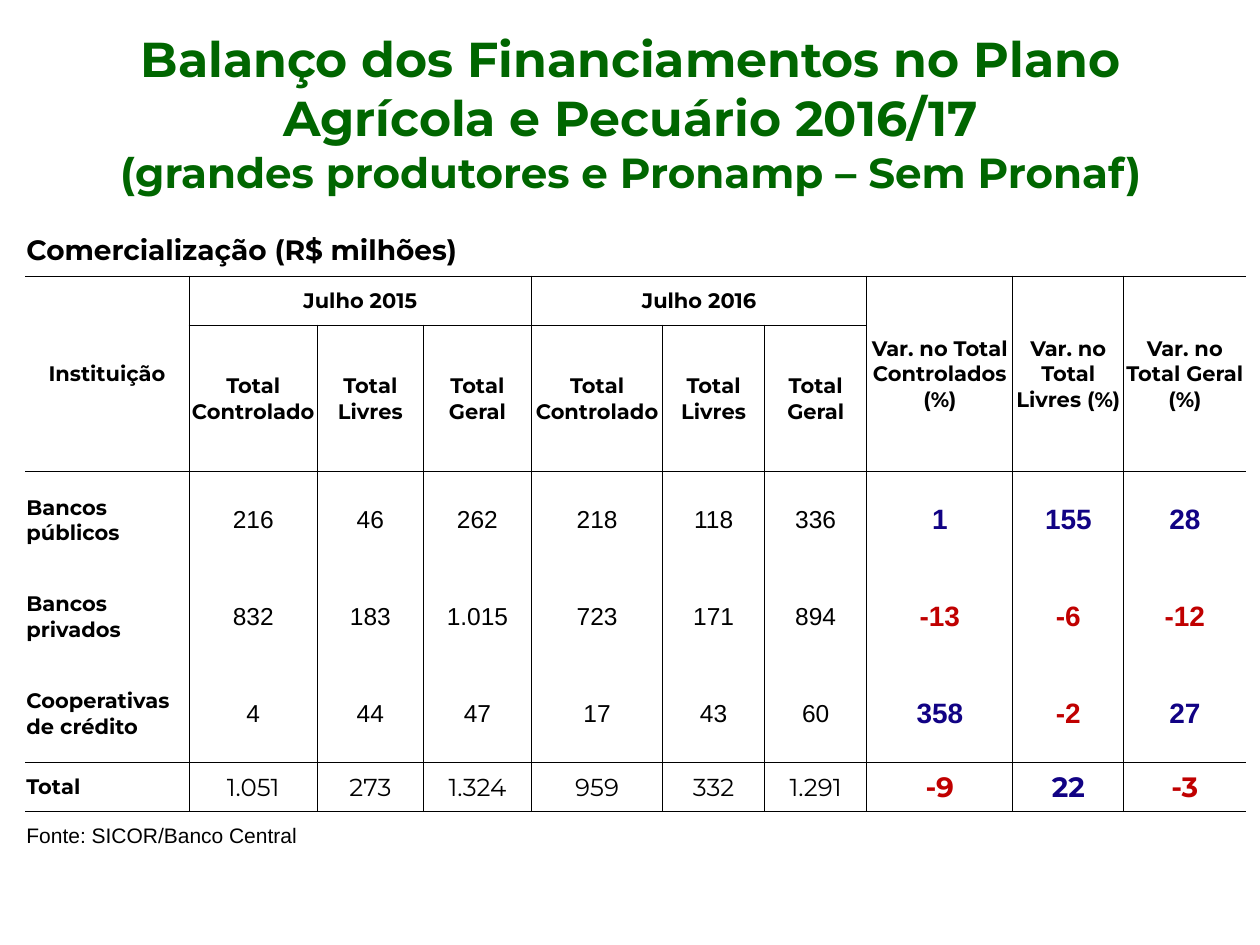
from lxml.etree import SubElement
from pptx import Presentation
from pptx.dml.color import RGBColor
from pptx.enum.text import MSO_ANCHOR as Anchor, PP_ALIGN as Align
from pptx.oxml.ns import qn
from pptx.util import Inches, Pt

BLACK = RGBColor(0x00, 0x00, 0x00)
GREEN = RGBColor(0x00, 0x66, 0x00)
BLUE = RGBColor(0x11, 0x02, 0x84)
RED = RGBColor(0xC0, 0x00, 0x00)

COLUMN_WIDTHS = [1.3, 1.02, 0.84, 0.86, 1.04, 0.81, 0.81, 1.16, 0.88, 0.97]
ROW_HEIGHTS = [0.41, 0.39, 1.16, 0.77, 0.77, 0.77, 0.39, 0.39]
LAST_COLUMN = len(COLUMN_WIDTHS) - 1
YEARS = {1: "Julho 2015", 4: "Julho 2016"}
MEASURES = ["Total Controlado", "Total Livres", "Total Geral"]
VARIATIONS = ["Var. no Total Controlados (%)", "Var. no Total Livres (%)",
              "Var. no Total Geral (%)"]
FIRST_VARIATION = 7
TOTAL_ROW = 6
SOURCE_ROW = 7
INSTITUTIONS = [
    ["Bancos públicos", "216", "46", "262", "218", "118", "336", "1", "155", "28"],
    ["Bancos privados", "832", "183", "1.015", "723", "171", "894", "-13", "-6", "-12"],
    ["Cooperativas de crédito", "4", "44", "47", "17", "43", "60", "358", "-2", "27"],
    ["Total", "1.051", "273", "1.324", "959", "332", "1.291", "-9", "22", "-3"],
]

HEADING = {"name": "Montserrat", "size": Pt(12), "bold": True}
CAPTION = {**HEADING, "size": Pt(16)}
SOURCE = {"name": "Arial", "size": Pt(12), "bold": False}
CELL_LAYOUT = {"margin_left": Inches(0.01), "margin_right": Inches(0.01),
               "margin_top": Inches(0.01), "margin_bottom": 0,
               "vertical_anchor": Anchor.MIDDLE}


def apply(target, settings):
    for name, value in settings.items():
        setattr(target, name, value)


def add_run(paragraph, text, style, color=BLACK):
    run = paragraph.add_run()
    run.text = text
    apply(run.font, style)
    run.font.color.rgb = color


def write_cell(cell, text, style, color=BLACK, align=Align.CENTER):
    paragraph = cell.text_frame.paragraphs[0]
    paragraph.alignment = align
    add_run(paragraph, text, style, color)


def has_rule_below(row, column):
    return row in (0, 2, 5, TOTAL_ROW) or (row == 1 and 0 < column < FIRST_VARIATION)


def has_rule_before(row, column):
    if row == 1:
        return column in (*YEARS, 7, 8, 9)
    return 1 < row < SOURCE_ROW and 0 < column <= LAST_COLUMN


def draw_borders(cell, row, column):
    sides = {"L": has_rule_before(row, column),
             "R": has_rule_before(row, column + 1),
             "T": has_rule_below(row - 1, column),
             "B": has_rule_below(row, column)}
    properties = cell._tc.get_or_add_tcPr()
    for side, visible in sides.items():
        line = SubElement(properties, qn(f"a:ln{side}"), w=str(Pt(0.5)))
        if visible:
            fill = SubElement(line, qn("a:solidFill"))
            SubElement(fill, qn("a:srgbClr"), val=str(BLACK))
        else:
            SubElement(line, qn("a:noFill"))


def add_title(slide):
    frame = slide.shapes.add_textbox(
        Inches(0.51), Inches(0.29), Inches(8.99), Inches(1.21)).text_frame
    apply(frame, {"word_wrap": True, "vertical_anchor": Anchor.MIDDLE})
    title = frame.paragraphs[0]
    title.alignment = Align.CENTER
    add_run(title, "Balanço dos Financiamentos no Plano Agrícola e Pecuário 2016/17",
            {**HEADING, "size": Pt(28)}, GREEN)
    title.add_line_break()
    add_run(title, "(grandes produtores e Pronamp – Sem Pronaf)",
            {**HEADING, "size": Pt(24)}, GREEN)


def add_grid(slide):
    table = slide.shapes.add_table(
        len(ROW_HEIGHTS), len(COLUMN_WIDTHS), Inches(0.2), Inches(1.78),
        Inches(sum(COLUMN_WIDTHS)), Inches(sum(ROW_HEIGHTS))).table
    apply(table, {"first_row": False, "horz_banding": False})
    for column, width in zip(table.columns, COLUMN_WIDTHS):
        column.width = Inches(width)
    for row, height in zip(table.rows, ROW_HEIGHTS):
        row.height = Inches(height)
    for row in range(len(ROW_HEIGHTS)):
        for column in range(len(COLUMN_WIDTHS)):
            cell = table.cell(row, column)
            apply(cell, CELL_LAYOUT)
            draw_borders(cell, row, column)
            cell.fill.background()
    return table


def fill_headings(table):
    table.cell(0, 0).merge(table.cell(0, 4))
    write_cell(table.cell(0, 0), "Comercialização (R$ milhões)", CAPTION, align=Align.LEFT)
    tall_headings = {0: "Instituição", **dict(enumerate(VARIATIONS, FIRST_VARIATION))}
    for column, heading in tall_headings.items():
        table.cell(1, column).merge(table.cell(2, column))
        write_cell(table.cell(1, column), heading, HEADING)
    for start, year in YEARS.items():
        table.cell(1, start).merge(table.cell(1, start + 2))
        write_cell(table.cell(1, start), year, HEADING)
        for column, measure in enumerate(MEASURES, start):
            write_cell(table.cell(2, column), measure, HEADING)


def fill_institutions(table):
    for row, (institution, *values) in enumerate(INSTITUTIONS, 3):
        write_cell(table.cell(row, 0), institution, HEADING, align=Align.LEFT)
        font_name = "Montserrat" if row == TOTAL_ROW else "Arial"
        for column, value in enumerate(values, 1):
            is_variation = column >= FIRST_VARIATION
            style = {"name": font_name, "size": Pt(16 if is_variation else 14),
                     "bold": is_variation}
            trend = RED if value.startswith("-") else BLUE
            write_cell(table.cell(row, column), value, style,
                       trend if is_variation else BLACK)


def fill_source(table):
    table.cell(SOURCE_ROW, 0).merge(table.cell(SOURCE_ROW, 2))
    write_cell(table.cell(SOURCE_ROW, 0), "Fonte: SICOR/Banco Central", SOURCE,
               align=Align.LEFT)


def main():
    deck = Presentation()
    apply(deck, {"slide_width": Inches(10), "slide_height": Inches(7.5)})
    slide = deck.slides.add_slide(deck.slide_layouts[6])
    table = add_grid(slide)
    fill_headings(table)
    fill_institutions(table)
    fill_source(table)
    add_title(slide)
    deck.save("out.pptx")


if __name__ == "__main__":
    main()
